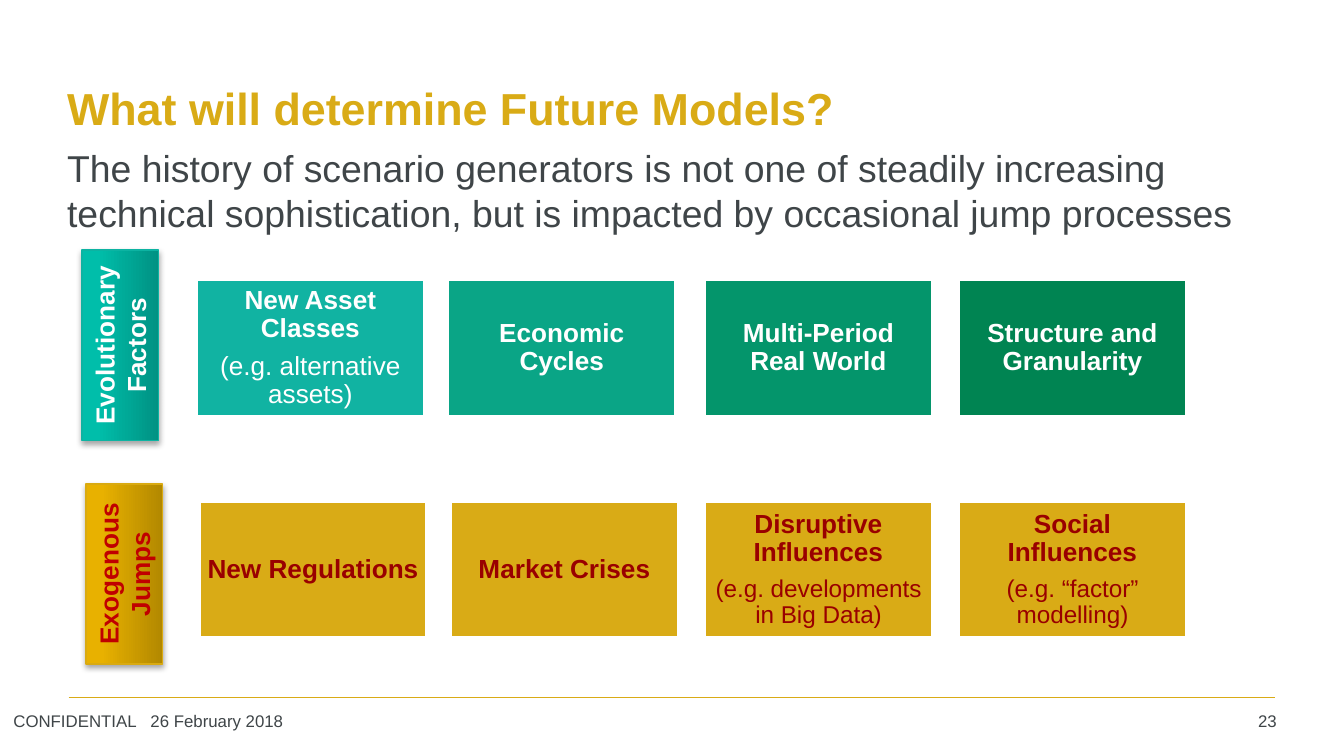
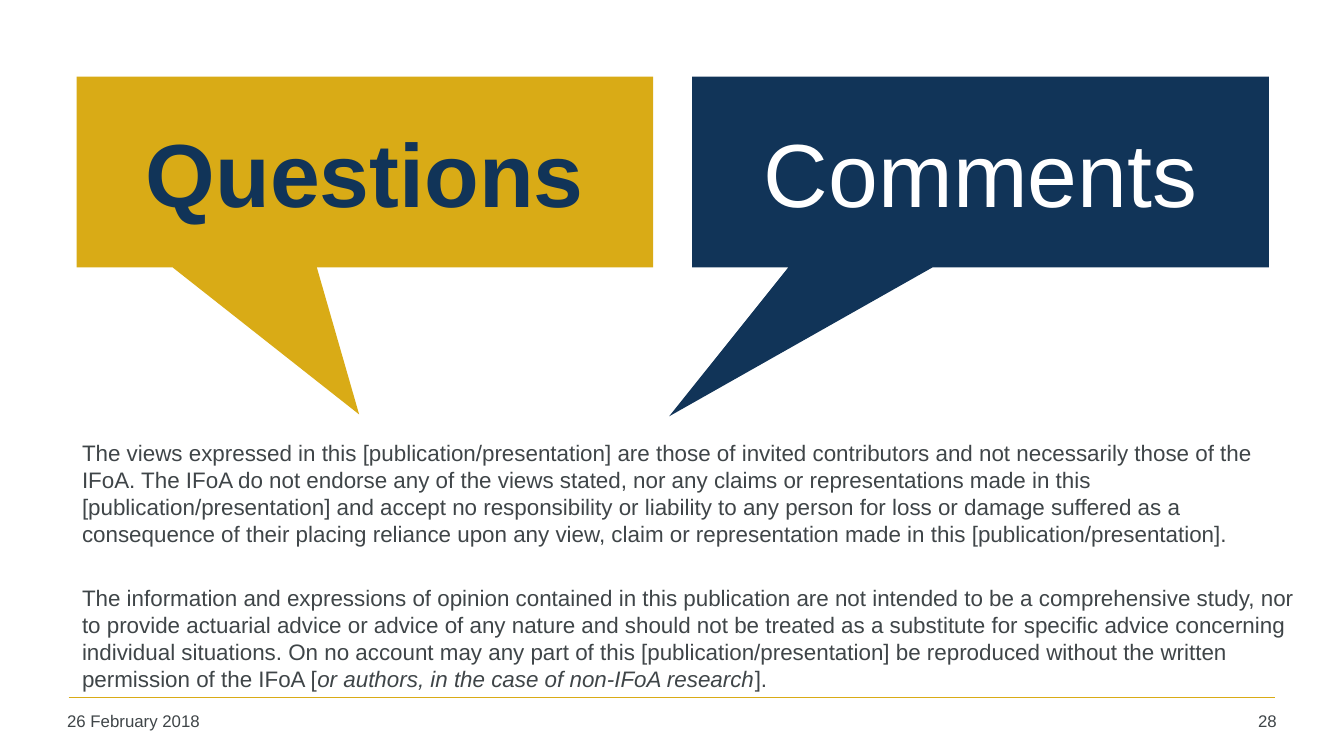
from lxml import etree
from pptx import Presentation
from pptx.dml.color import RGBColor
from pptx.enum.shapes import MSO_CONNECTOR, MSO_SHAPE
from pptx.enum.text import MSO_ANCHOR, MSO_AUTO_SIZE, PP_ALIGN
from pptx.oxml import parse_xml
from pptx.oxml.ns import qn
from pptx.util import Inches, Pt

LINE = MSO_CONNECTOR.STRAIGHT
RECT = MSO_SHAPE.RECTANGLE
CALLOUT = MSO_SHAPE.RECTANGULAR_CALLOUT
TOP, MIDDLE = MSO_ANCHOR.TOP, MSO_ANCHOR.MIDDLE
LEFT, CENTER, RIGHT = PP_ALIGN.LEFT, PP_ALIGN.CENTER, PP_ALIGN.RIGHT
GROW = MSO_AUTO_SIZE.SHAPE_TO_FIT_TEXT

NS = "http://schemas.openxmlformats.org/drawingml/2006/main"
FONT = "Arial"
DATE = "26 February 2018"
COLORS = {
    "gold": "D9AB16", "navy": "113458", "ink": "3F4548", "white": "FFFFFF",
    "red": "C00000", "maroon": "990000",
    "teal_edge": "0DB3A2", "gold_edge": "D9AA11",
}
TEALS = ["11B3A2", "0AA586", "04956B", "008452"]
TEAL_FADE = [(0, "009283"), (80, "00BEAA"), (100, "00BFAB")]
GOLD_FADE = [(0, "B28800"), (80, "E8B100"), (100, "E9B200")]

FACTORS = [
    (1.46, "New Asset Classes", "(e.g. alternative assets)"),
    (3.33, "Economic Cycles", None),
    (5.24, "Multi-Period Real World", None),
    (7.13, "Structure and Granularity", None),
]
JUMPS = [
    (1.48, "New Regulations", None),
    (3.35, "Market Crises", None),
    (5.24, "Disruptive Influences", "(e.g. developments in Big Data)"),
    (7.13, "Social Influences", "(e.g. “factor” modelling)"),
]
VIEWS = (
    "The views expressed in this [publication/presentation] are those of "
    "invited contributors and not necessarily those of the IFoA. The IFoA do "
    "not endorse any of the views stated, nor any claims or representations "
    "made in this [publication/presentation] and accept no responsibility or "
    "liability to any person for loss or damage suffered as a consequence of "
    "their placing reliance upon any view, claim or representation made in "
    "this [publication/presentation]."
)
ADVICE = (
    "The information and expressions of opinion contained in this publication "
    "are not intended to be a comprehensive study, nor to provide actuarial "
    "advice or advice of any nature and should not be treated as a substitute "
    "for specific advice concerning individual situations. On no account may "
    "any part of this [publication/presentation] be reproduced without the "
    "written permission of the IFoA ["
)
AUTHORS = "or authors, in the case of non-IFoA research"


def rgb(name):
    return RGBColor.from_string(COLORS.get(name, name))


def style(para, size, color, bold=False, align=LEFT):
    para.alignment = align
    font = para.font
    font.name, font.size, font.bold = FONT, Pt(size), bold
    font.color.rgb = rgb(color)


def fit(frame, anchor, side, edge):
    """Wrap the frame and set its anchor and margins."""
    frame.word_wrap = True
    frame.vertical_anchor = anchor
    frame.margin_left = frame.margin_right = Inches(side)
    frame.margin_top = frame.margin_bottom = Inches(edge)


def label(slide, box, text, size, color="ink", bold=False, align=LEFT, anchor=TOP):
    """Add a text box and return its frame."""
    frame = slide.shapes.add_textbox(*map(Inches, box)).text_frame
    fit(frame, anchor, 0.07, 0.04)
    para = frame.paragraphs[0]
    para.text = text
    style(para, size, color, bold, align)
    return frame


def block(slide, kind, box, fill, edge=None, width=0):
    """Add a filled shape, outlined only when an edge colour is given."""
    shape = slide.shapes.add_shape(kind, *map(Inches, box))
    shape.shadow.inherit = False
    shape.fill.solid()
    shape.fill.fore_color.rgb = rgb(fill)
    if edge:
        shape.line.color.rgb = rgb(edge)
        shape.line.width = Pt(width)
    else:
        shape.line.fill.background()
    return shape


def footer(slide, number, left, mark=None):
    """Draw the rule, date and page number, with an optional mark at far left."""
    rule = slide.shapes.add_connector(
        LINE, Inches(0.51), Inches(5.19), Inches(9.49), Inches(5.19))
    rule.line.color.rgb = rgb("gold")
    rule.line.width = Pt(1)
    etree.SubElement(rule._element.spPr, qn("a:effectLst"))
    label(slide, (left, 5.25, 2.2, 0.27), DATE, 9)
    label(slide, (8.86, 5.25, 0.71, 0.28), str(number), 9, align=RIGHT)
    if mark:
        label(slide, (0.03, 5.25, 10, 0.27), mark, 9)


def strip(slide, box, text, color, fade, edge):
    """Draw a shaded tab that fills the box and reads from bottom to top."""
    left, top, wide, high = box
    flat = (left + (wide - high) / 2, top + (high - wide) / 2, high, wide)
    shape = block(slide, RECT, flat, edge, edge, 0.75)
    shape.rotation = 270
    stops = "".join(
        f'<a:gs pos="{pos * 1000}"><a:srgbClr val="{tone}"/></a:gs>'
        for pos, tone in fade)
    props = shape._element.spPr
    props.replace(props.find(qn("a:solidFill")), parse_xml(
        f'<a:gradFill xmlns:a="{NS}" rotWithShape="1"><a:gsLst>{stops}</a:gsLst>'
        '<a:lin ang="16200000" scaled="0"/></a:gradFill>'))
    props.find(qn("a:effectLst")).append(parse_xml(
        f'<a:outerShdw xmlns:a="{NS}" blurRad="40000" dist="23000" dir="5400000" '
        'rotWithShape="0"><a:srgbClr val="000000"><a:alpha val="35000"/>'
        '</a:srgbClr></a:outerShdw>'))
    frame = shape.text_frame
    fit(frame, TOP, 0.1, 0.05)
    frame.auto_size = GROW
    para = frame.paragraphs[0]
    para.text = text
    style(para, 14, color, True, CENTER)


def cards(slide, top, items, fills, color, small):
    """Draw a row of cards, each with a heading and perhaps an example."""
    for (left, head, note), fill in zip(items, fills):
        box = (left, top, 1.7, 1.02)
        frame = block(slide, RECT, box, fill, "white", 2).text_frame
        fit(frame, MIDDLE, 0.06, 0.06)
        para = frame.paragraphs[0]
        para.text = head
        style(para, 14, color, True, CENTER)
        para.line_spacing = 0.9
        if note:
            para.space_after = Pt(5)
            para = frame.add_paragraph()
            para.text = note
            style(para, small, color, False, CENTER)
            para.line_spacing = 0.9


def bubble(slide, box, tip, fill, text, color, bold):
    shape = block(slide, CALLOUT, box, fill)
    for index, value in enumerate(tip):
        shape.adjustments[index] = value
    fit(shape.text_frame, MIDDLE, 0.1, 0.05)
    para = shape.text_frame.paragraphs[0]
    para.text = text
    style(para, 48, color, bold, CENTER)


def legal(slide, box):
    """Write the two disclaimer paragraphs."""
    para = label(slide, box, VIEWS, 12).add_paragraph()
    style(para, 12, "ink")
    para.space_before = Pt(20)
    for text, slant in ((ADVICE, False), (AUTHORS, True), ("].", False)):
        run = para.add_run()
        run.text = text
        run.font.italic = slant


def models(slide):
    footer(slide, 23, 1.05, "CONFIDENTIAL")
    label(slide, (0.43, 0.33, 9.07, 0.94), "What will determine Future Models?",
          24, "gold", True, anchor=MIDDLE)
    label(slide, (0.43, 1.04, 9.07, 0.75),
          "The history of scenario generators is not one of steadily increasing "
          "technical sophistication, but is impacted by occasional jump processes",
          20)
    strip(slide, (0.61, 1.86, 0.57, 1.42), "Evolutionary Factors",
          "white", TEAL_FADE, "teal_edge")
    strip(slide, (0.64, 3.6, 0.57, 1.34), "Exogenous Jumps",
          "red", GOLD_FADE, "gold_edge")
    cards(slide, 2.08, FACTORS, TEALS, "white", 14)
    cards(slide, 3.73, JUMPS, ["gold"] * 4, "maroon", 13)


def closing(slide):
    footer(slide, 28, 0.43)
    legal(slide, (0.54, 3.23, 9.19, 1.99))
    bubble(slide, (0.57, 0.57, 4.29, 1.42), (-0.01, 1.27), "gold",
           "Questions", "navy", True)
    bubble(slide, (5.15, 0.57, 4.29, 1.42), (-0.54, 1.28), "navy",
           "Comments", "white", False)


def main():
    deck = Presentation()
    deck.slide_width = Inches(10)
    deck.slide_height = Inches(10) * 9 // 16
    for build in (models, closing):
        build(deck.slides.add_slide(deck.slide_layouts[6]))
    deck.save("out.pptx")


if __name__ == "__main__":
    main()
